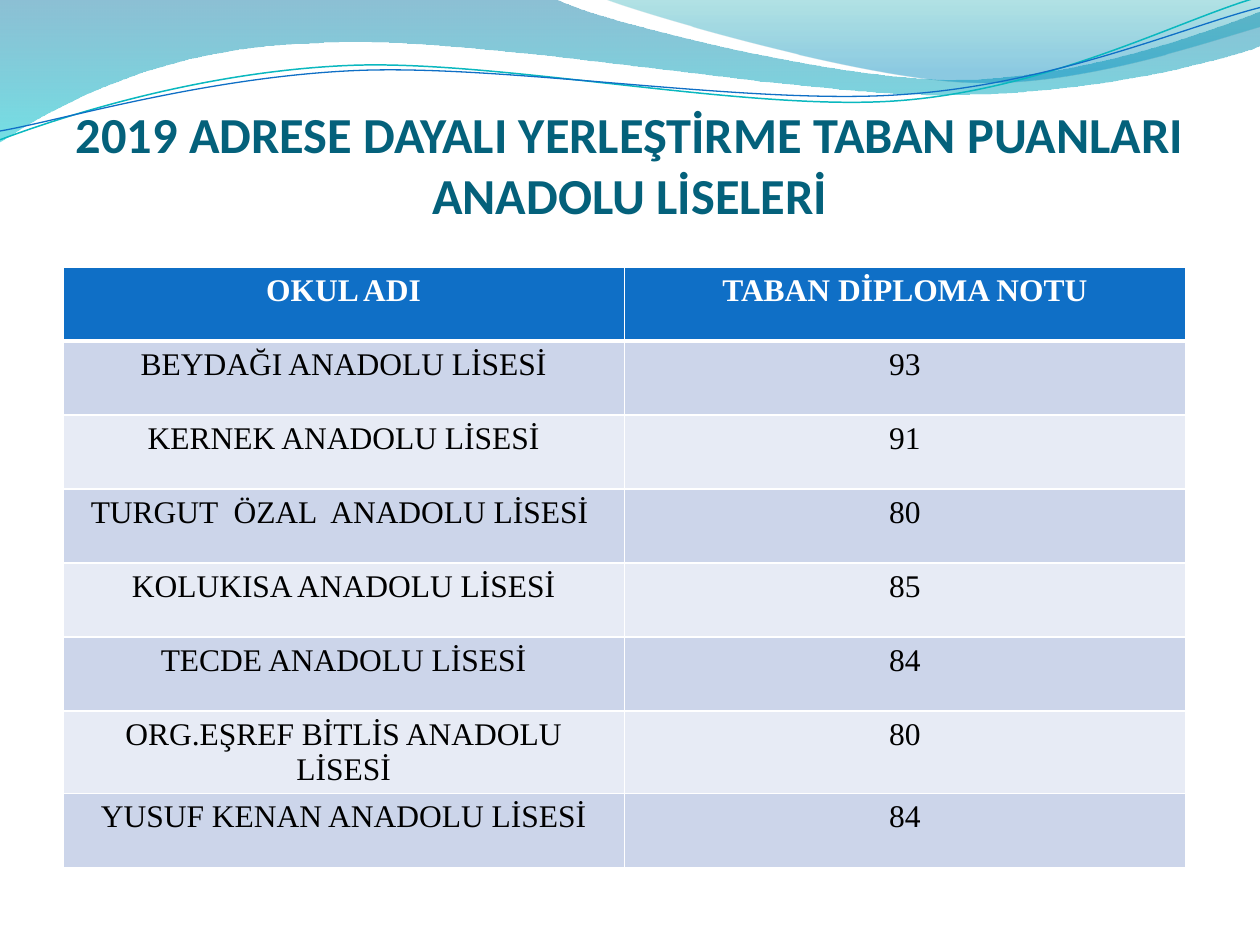
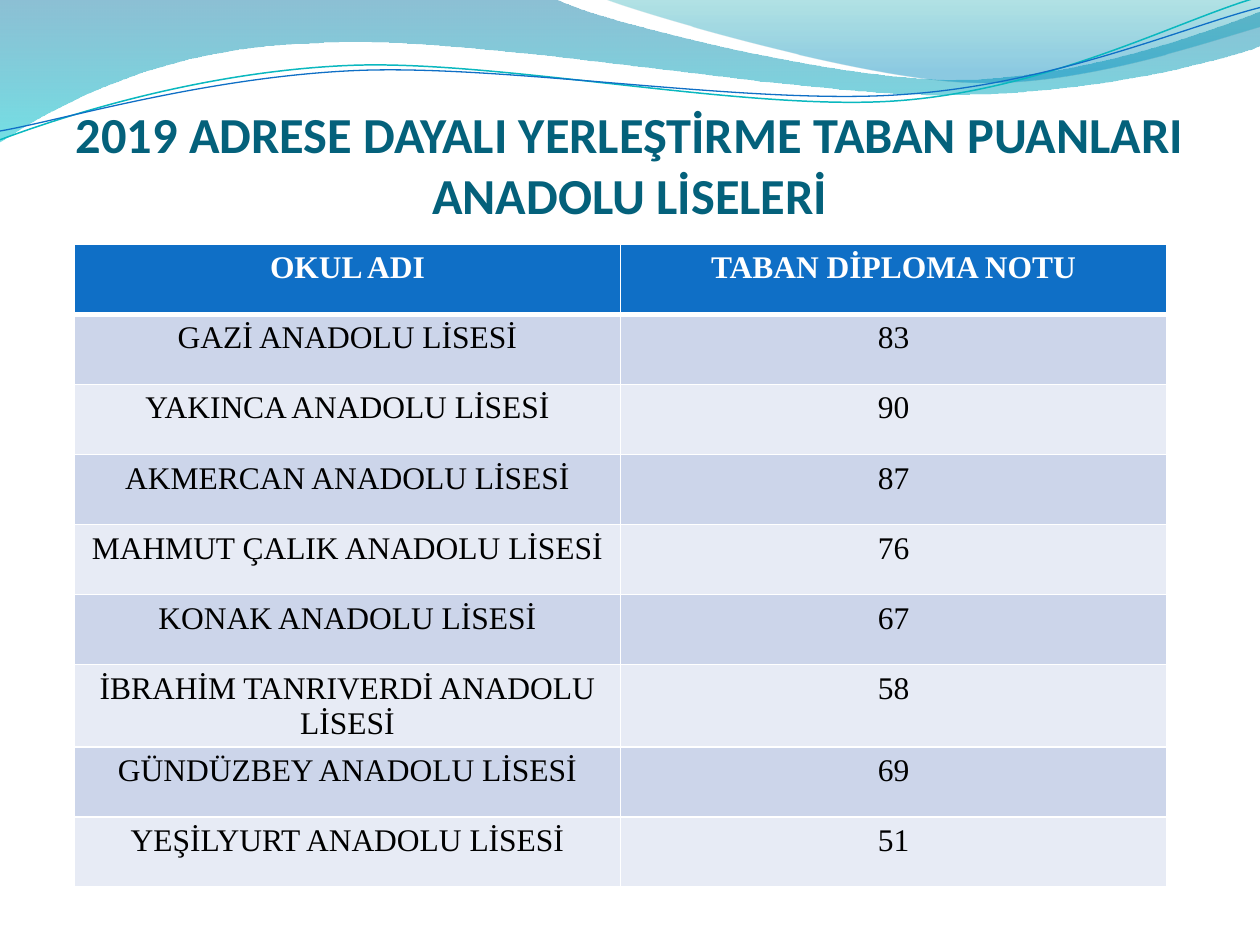
from itertools import islice

from pptx import Presentation
from pptx import util as u
from pptx.dml.color import RGBColor
from pptx.enum import text
from pptx.oxml.ns import qn
from pptx.oxml.xmlchemy import OxmlElement

# Content
TITLE = "2019 ADRESE DAYALI YERLEŞTİRME TABAN PUANLARI\vANADOLU LİSELERİ"
HEADER = ("OKUL ADI", "TABAN DİPLOMA NOTU")
PAGES = [
    {"left": 0.5, "top": 2.12, "width": 8.91, "height": 4.76, "schools": [
        ("BEYDAĞI ANADOLU LİSESİ", 93),
        ("KERNEK ANADOLU LİSESİ", 91),
        ("TURGUT  ÖZAL  ANADOLU LİSESİ ", 80),
        ("KOLUKISA ANADOLU LİSESİ", 85),
        ("TECDE ANADOLU LİSESİ", 84),
        ("ORG.EŞREF BİTLİS ANADOLU LİSESİ", 80),
        ("YUSUF KENAN ANADOLU LİSESİ", 84),
    ]},
    {"left": 0.59, "top": 1.94, "width": 8.67, "height": 5.1, "schools": [
        ("GAZİ ANADOLU LİSESİ", 83),
        ("YAKINCA ANADOLU LİSESİ", 90),
        ("AKMERCAN ANADOLU LİSESİ", 87),
        ("MAHMUT ÇALIK ANADOLU LİSESİ", 76),
        ("KONAK ANADOLU LİSESİ", 67),
        ("İBRAHİM TANRIVERDİ ANADOLU LİSESİ", 58),
        ("GÜNDÜZBEY ANADOLU LİSESİ", 69),
        ("YEŞİLYURT ANADOLU LİSESİ", 51),
    ]},
]
TWO_LINE_ROW, TWO_LINE_HEIGHT = 6, 0.65

# Colours and fonts
WHITE = RGBColor(0xFF, 0xFF, 0xFF)
BLACK = RGBColor(0, 0, 0)
TITLE_TEAL = RGBColor(0x04, 0x61, 0x7B)
BLUE = RGBColor(0x0F, 0x6F, 0xC6)
AQUA = RGBColor(0x0A, 0xB8, 0xBF)
BAND_DARK = RGBColor(0xCC, 0xD5, 0xEA)
BAND_LIGHT = RGBColor(0xE7, 0xEB, 0xF5)
WAVE_NAVY = RGBColor(0x00, 0x74, 0xA1)
WAVE_CYAN = RGBColor(0x00, 0xC6, 0xCF)
WAVE_TEAL = RGBColor(0x00, 0xA1, 0xA9)
WAVE_SKY = RGBColor(0x00, 0x8B, 0xBF)
TITLE_FONT, TABLE_FONT = "Calibri", "Times New Roman"

# Header waves: one point is a straight step, three points are a curve.
# Gradient stops are (position, colour, opacity in percent).
WAVES = [
    {"start": (0, 0), "steps": [
        [(4.4, -0.01)],
        [(4.76, 0.17), (6.64, 0.63), (7.58, 0.63)],
        [(8.53, 0.63), (9.58, 0.26), (10, 0.09)],
        [(10.01, 0.36)],
        [(9.83, 0.44), (8.7, 0.76), (7.46, 0.75)],
        [(6.22, 0.75), (3.82, 0.28), (2.57, 0.34)],
        [(1.29, 0.36), (0.46, 0.83), (-0.01, 1.13)]],
     "stops": [(0, WAVE_NAVY, 45), (1, WAVE_CYAN, 55)]},
    {"start": (4.79, -0.01), "steps": [
        [(5.09, 0.11), (6.82, 0.62), (7.69, 0.65)],
        [(8.56, 0.69), (9.61, 0.32), (10, 0.21)],
        [(10, 0)]],
     "stops": [(0, WAVE_TEAL, 30), (0.8, WAVE_SKY, 45)]},
    {"start": (0, 1.11), "steps": [
        [(0.48, 0.93), (1.58, 0.57), (2.77, 0.52)],
        [(3.95, 0.47), (5.93, 0.89), (7.13, 0.8)],
        [(8.33, 0.71), (9.38, 0.15), (9.98, -0.02)]],
     "line": (AQUA, 0.85)},
    {"start": (0, 1.04), "steps": [
        [(0.47, 0.96), (1.64, 0.61), (2.83, 0.56)],
        [(4.03, 0.51), (5.97, 0.84), (7.17, 0.75)],
        [(8.36, 0.67), (9.41, 0.21), (10, 0.06)]],
     "line": (BLUE, 0.75)},
]


def inches(point):
    return tuple(u.Inches(value) for value in point)


def add_wave(page, wave):
    builder = page.shapes.build_freeform(*inches(wave["start"]))
    points = [inches(point) for step in wave["steps"] for point in step]
    builder.add_line_segments(points, close="stops" in wave)
    shape = builder.convert_to_shape()
    shape.shadow.inherit = False

    # Turn each three-point step into a Bézier curve
    outline = next(shape.element.iter(qn("a:path")))
    lines = iter(outline.findall(qn("a:lnTo")))
    for step in wave["steps"]:
        group = list(islice(lines, len(step)))
        if len(step) == 3:
            curve = OxmlElement("a:cubicBezTo")
            group[0].addprevious(curve)
            for line in group:
                curve.append(line[0])
                outline.remove(line)

    if "line" in wave:
        colour, width = wave["line"]
        shape.fill.background()
        shape.line.color.rgb = colour
        shape.line.width = u.Pt(width)
    else:
        shape.line.fill.background()
        shape.fill.gradient()
        shape.fill.gradient_angle = 270
        for stop, (position, colour, opacity) in zip(
                shape.fill.gradient_stops, wave["stops"]):
            stop.position = position
            stop.color.rgb = colour
        for node, (_, _, opacity) in zip(
                shape.element.iter(qn("a:srgbClr")), wave["stops"]):
            alpha = OxmlElement("a:alpha")
            alpha.set("val", str(opacity * 1000))
            node.append(alpha)
    return shape


def style_paragraph(para, font, size, colour, bold):
    para.alignment = text.PP_ALIGN.CENTER
    para.font.name = font
    para.font.size = u.Pt(size)
    para.font.color.rgb = colour
    para.font.bold = bold


def set_borders(cell, top, bottom):
    properties = cell._tc.get_or_add_tcPr()
    for side, width in (("L", 1), ("R", 1), ("T", top), ("B", bottom)):
        line = OxmlElement(f"a:ln{side}")
        line.set("w", str(u.Pt(width)))
        fill = OxmlElement("a:solidFill")
        colour = OxmlElement("a:srgbClr")
        colour.set("val", str(WHITE))
        fill.append(colour)
        line.append(fill)
        properties.append(line)


def add_score_table(page, content):
    rows = [HEADER] + content["schools"]
    frame = page.shapes.add_table(
        len(rows), len(HEADER),
        *inches(content[key] for key in ("left", "top", "width", "height")))
    table = frame.table
    table.horz_banding = False
    row_height = (content["height"] - TWO_LINE_HEIGHT) / (len(rows) - 1)
    for r, values in enumerate(rows):
        table.rows[r].height = u.Inches(
            TWO_LINE_HEIGHT if r == TWO_LINE_ROW else row_height)
        is_header = r == 0
        band = BLUE if is_header else BAND_DARK if r % 2 else BAND_LIGHT
        for c, value in enumerate(values):
            cell = table.cell(r, c)
            cell.text = str(value)
            style_paragraph(cell.text_frame.paragraphs[0], TABLE_FONT, 18,
                            WHITE if is_header else BLACK, is_header)
            set_borders(cell, top=3 if r == 1 else 1,
                        bottom=3 if is_header else 1)
            cell.fill.solid()
            cell.fill.fore_color.rgb = band


def prepare_layout(layout, page):
    """Give the layout its title box and the header waves."""
    title = layout.placeholders[0]
    title.left, title.top, title.width, title.height = inches((0, 0.77, 10, 1.01))
    frame = title.text_frame
    frame.margin_left = frame.margin_right = frame.margin_bottom = 0
    frame.margin_top = u.Inches(0.05)
    frame.vertical_anchor = text.MSO_ANCHOR.BOTTOM
    frame.auto_size = text.MSO_AUTO_SIZE.NONE
    for wave in WAVES:
        layout.shapes.element.append(add_wave(page, wave).element)


def main():
    deck = Presentation()
    deck.slide_width, deck.slide_height = inches((10, 7.5))
    layout = deck.slide_layouts[5]
    for number, content in enumerate(PAGES):
        page = deck.slides.add_slide(layout)
        if number == 0:
            prepare_layout(layout, page)
        title = page.shapes.title
        title.text_frame.text = TITLE
        style_paragraph(title.text_frame.paragraphs[0],
                        TITLE_FONT, 28.8, TITLE_TEAL, True)
        add_score_table(page, content)
    deck.save("out.pptx")


if __name__ == "__main__":
    main()
